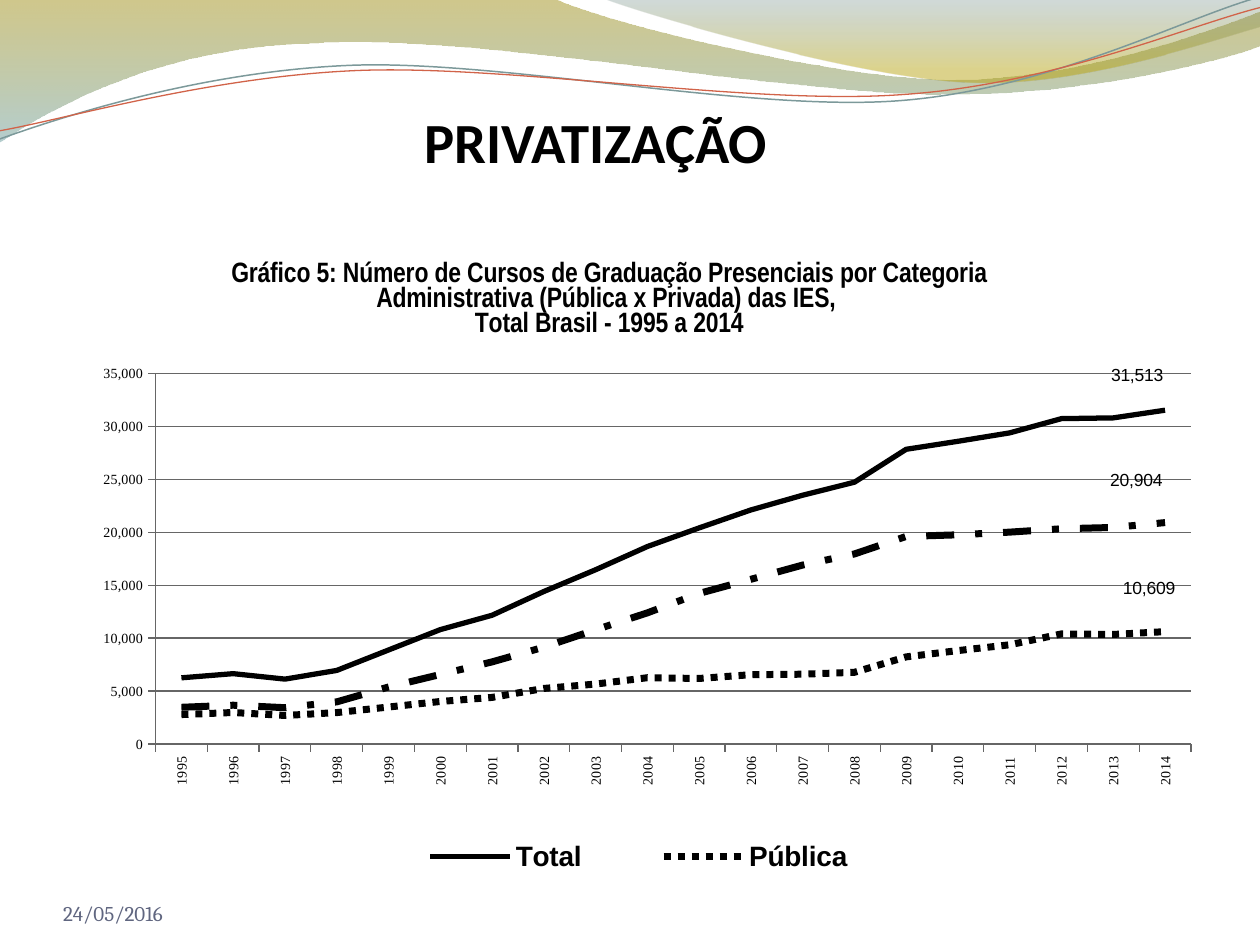
from pptx import Presentation, oxml
from pptx import util as u
from pptx.chart import data
from pptx.dml import color
from pptx.enum import chart as kinds, dml, text
from pptx.oxml import ns

THEME = {
    "black": "000000", "grid": "666666", "date": "606680",
    "olive": "978500", "aqua": "77A5A6", "slate": "648484", "gold": "B49F00",
    "teal": "7C999A", "red": "D16349",
    "title_size": 32.4, "break_size": 29, "date_size": 12, "chart_title_size": 16,
    "legend_size": 16, "label_size": 10, "axis_size": 8,
}
CHART_WIDTH, CHART_HEIGHT = 656, 362.9


def style(font, **values):
    font.color.rgb = color.RGBColor.from_string(THEME[values.pop("ink")])
    for name, value in values.items():
        setattr(font, name, value)


def place(parent, index, target="", mode="edge", **values):
    for old in parent.findall(ns.qn("c:layout")):
        parent.remove(old)
    parts = [f'<c:layoutTarget val="{target}"/>'] if target else []
    parts += [f'<c:{axis}Mode val="{mode}"/>' for axis in "xy"]
    parts += [f'<c:{name} val="{value}"/>' for name, value in values.items()]
    parent.insert(index, oxml.parse_xml(
        f'<c:layout {ns.nsdecls("c")}><c:manualLayout>{"".join(parts)}</c:manualLayout></c:layout>'))


deck = Presentation()
deck.slide_width, deck.slide_height = u.Pt(720), u.Pt(540)
page = deck.slides.add_slide(deck.slide_layouts[6])

outlines = [
    {"start": (0, 0), "stops": [("olive", 0, 45), ("aqua", 1, 55)], "steps": [
        (316.8, -0.7), (342.7, 12.2, 478.1, 45.4, 545.8, 45.4),
        (614.2, 45.4, 689.8, 18.7, 720, 6.5), (720.7, 25.9),
        (707.8, 31.7, 626.4, 54.7, 537.1, 54), (447.8, 54, 275, 20.2, 185, 24.5),
        (92.9, 25.9, 33.1, 59.8, -0.7, 81.4)]},
    {"start": (344.9, -0.7), "stops": [("slate", 0, 30), ("gold", 0.8, 45)], "steps": [
        (366.5, 7.9, 491, 44.6, 553.7, 46.8),
        (616.3, 49.7, 691.9, 23, 720, 15.1), (720, 0)]},
    {"start": (-1.4, 79.9), "line": ("teal", 0.85), "steps": [
        (34.6, 67, 113.8, 41, 199.4, 37.4), (284.4, 33.8, 427, 64.1, 513.4, 57.6),
        (599.8, 51.1, 675.4, 10.8, 718.6, -1.4)]},
    {"start": (-1.4, 74.9), "line": ("red", 0.75), "steps": [
        (33.8, 69.1, 118.1, 43.9, 203.8, 40.3), (290.2, 36.7, 429.8, 60.5, 516.2, 54),
        (601.9, 48.2, 677.5, 15.1, 720, 4.3)]},
]
for outline in outlines:
    steps = outline["steps"]
    corners = [(u.Pt(x), u.Pt(y)) for step in steps for x, y in zip(step[::2], step[1::2])]
    builder = page.shapes.build_freeform(*map(u.Pt, outline["start"]), scale=1.0)
    builder.add_line_segments(corners, close="stops" in outline)
    wave = builder.convert_to_shape()
    wave.shadow.inherit = False
    segments = iter(wave.element.xpath(".//a:lnTo"))
    for step in steps:
        first = next(segments)
        if len(step) == 6:
            curve = oxml.parse_xml(f'<a:cubicBezTo {ns.nsdecls("a")}/>')
            first.addprevious(curve)
            for segment in (first, next(segments), next(segments)):
                curve.append(segment[0])
                segment.getparent().remove(segment)
    if "stops" in outline:
        wave.line.fill.background()
        wave.fill.gradient()
        wave.fill.gradient_angle = 270
        for stop, (ink, position, _) in zip(wave.fill.gradient_stops, outline["stops"]):
            stop.color.rgb = color.RGBColor.from_string(THEME[ink])
            stop.position = position
        for shade, (_, _, opacity) in zip(wave.element.xpath(".//a:gs/a:srgbClr"), outline["stops"]):
            shade.append(oxml.parse_xml(f'<a:alpha {ns.nsdecls("a")} val="{opacity * 1000}"/>'))
    else:
        ink, width = outline["line"]
        wave.fill.background()
        wave.line.color.rgb = color.RGBColor.from_string(THEME[ink])
        wave.line.width = u.Pt(width)

captions = [
    ("PRIVATIZAÇÃO\v", (16.5, 78.5, 648, 56.1), 3.6, text.PP_ALIGN.CENTER,
     {"ink": "black", "name": "Calibri", "size": u.Pt(THEME["title_size"]), "bold": True}),
    ("24/05/2016", (36, 500.4, 168, 28.8), 0, text.PP_ALIGN.LEFT,
     {"ink": "date", "name": "Cambria", "size": u.Pt(THEME["date_size"])}),
]
for words, bounds, inset, align, look in captions:
    box = page.shapes.add_textbox(*map(u.Pt, bounds))
    frame = box.text_frame
    frame.word_wrap = True
    frame.vertical_anchor = text.MSO_ANCHOR.BOTTOM
    for side in ("left", "right", "bottom"):
        setattr(frame, f"margin_{side}", 0)
    frame.margin_top = u.Pt(inset)
    para = frame.paragraphs[0]
    para.text = words
    para.alignment = align
    for span in para.runs:
        style(span.font, **look)
    for gap in box.element.xpath(".//a:br"):
        for parent, tag in ((gap, "rPr"), (gap.getparent(), "endParaRPr")):
            parent.append(oxml.parse_xml(
                f'<a:{tag} {ns.nsdecls("a")} sz="{THEME["break_size"] * 100}">'
                f'<a:latin typeface="Calibri"/></a:{tag}>'))

courses = data.CategoryChartData(number_format="#,##0")
courses.categories = [str(year) for year in range(1995, 2015)]
courses.add_series("Total", [
    6252, 6644, 6132, 6950, 8878, 10805, 12155, 14399, 16453, 18644,
    20407, 22101, 23488, 24719, 27827, 28577, 29376, 30718, 30791, 31513])
courses.add_series("Pública", [
    2782, 2978, 2698, 2970, 3494, 4021, 4401, 5252, 5662, 6262,
    6191, 6549, 6596, 6772, 8228, 8821, 9368, 10394, 10344, 10609])
courses.add_series("Privada", [
    3470, 3666, 3434, 3980, 5384, 6564, 7754, 9147, 10791, 12382,
    14216, 15552, 16892, 17947, 19599, 19756, 20008, 20324, 20447, 20904])
chart = page.shapes.add_chart(
    kinds.XL_CHART_TYPE.LINE, *map(u.Pt, (33.8, 140.4, CHART_WIDTH, CHART_HEIGHT)), courses).chart
style(chart.font, ink="black", name="Times New Roman", size=u.Pt(THEME["label_size"]))
place(chart.element.chart.plotArea, 0, "inner", x=0.084, y=0.201, w=0.902, h=0.584)

heading = chart.chart_title.text_frame
heading.text = ("Gráfico 5: Número de Cursos de Graduação Presenciais por Categoria "
                "Administrativa (Pública x Privada) das IES, \nTotal Brasil - 1995 a 2014")
for para in heading.paragraphs:
    para.alignment = text.PP_ALIGN.CENTER
    for span in para.runs:
        style(span.font, ink="black", name="Arial Narrow",
              size=u.Pt(THEME["chart_title_size"]), bold=True)
place(chart.element.chart.find(ns.qn("c:title")), 1, x=96.2 / CHART_WIDTH, y=6.1 / CHART_HEIGHT)

chart.has_legend = True
legend = chart.legend
legend.position = kinds.XL_LEGEND_POSITION.BOTTOM
legend.include_in_layout = False
style(legend.font, ink="black", name="Arial", size=u.Pt(THEME["legend_size"]), bold=True)
key = chart.element.chart.find(ns.qn("c:legend"))
place(key, 1, x=0.26, y=338.1 / CHART_HEIGHT, w=0.49, h=0.06)
key.insert(1, oxml.parse_xml(
    f'<c:legendEntry {ns.nsdecls("c")}><c:idx val="2"/><c:delete val="1"/></c:legendEntry>'))

years, counts = chart.category_axis, chart.value_axis
counts.minimum_scale, counts.maximum_scale, counts.major_unit = 0, 35000, 5000
counts.tick_labels.number_format = "#,##0"
counts.tick_labels.number_format_is_linked = False
counts.has_major_gridlines = True
for axis in (years, counts):
    axis.major_tick_mark = kinds.XL_TICK_MARK.OUTSIDE
    style(axis.tick_labels.font, ink="black", name="Times New Roman", size=u.Pt(THEME["axis_size"]))
for rule in (years.format.line, counts.format.line, counts.major_gridlines.format.line):
    rule.color.rgb = color.RGBColor.from_string(THEME["grid"])
    rule.width = u.Pt(0.75)
turn = chart.element.xpath(".//c:catAx/c:txPr/a:bodyPr")[0]
turn.set("rot", "-5400000")
turn.set("vert", "horz")

strokes = [
    (3, dml.MSO_LINE.SOLID, -16, -11.5),
    (4, dml.MSO_LINE.ROUND_DOT, -9.2, -16.4),
    (4, dml.MSO_LINE.DASH_DOT, -16.5, -15.8),
]
for series, (width, dash, shift_x, shift_y) in zip(chart.plots[0].series, strokes):
    series.smooth = False
    series.marker.style = kinds.XL_MARKER_STYLE.NONE
    stroke = series.format.line
    stroke.color.rgb = color.RGBColor.from_string(THEME["black"])
    stroke.width, stroke.dash_style = u.Pt(width), dash
    label = series.points[19].data_label
    style(label.font, ink="black", name="Arial", size=u.Pt(THEME["label_size"]))
    label.position = kinds.XL_LABEL_POSITION.ABOVE
    labels = series._element.find(ns.qn("c:dLbls"))
    place(labels.find(ns.qn("c:dLbl")), 1, mode="factor",
          x=shift_x / CHART_WIDTH, y=shift_y / CHART_HEIGHT)
    for leader in labels.findall(ns.qn("c:showLeaderLines")):
        leader.set("val", "0")
    labels.append(oxml.parse_xml(
        f'<c:extLst {ns.nsdecls("c")}><c:ext uri="{{CE6537A1-D6FC-4f65-9D91-7224C49458BB}}" '
        'xmlns:c15="http://schemas.microsoft.com/office/drawing/2012/chart">'
        '<c15:showLeaderLines val="0"/></c:ext></c:extLst>'))
chart.plots[0].vary_by_categories = False

deck.save("out.pptx")
